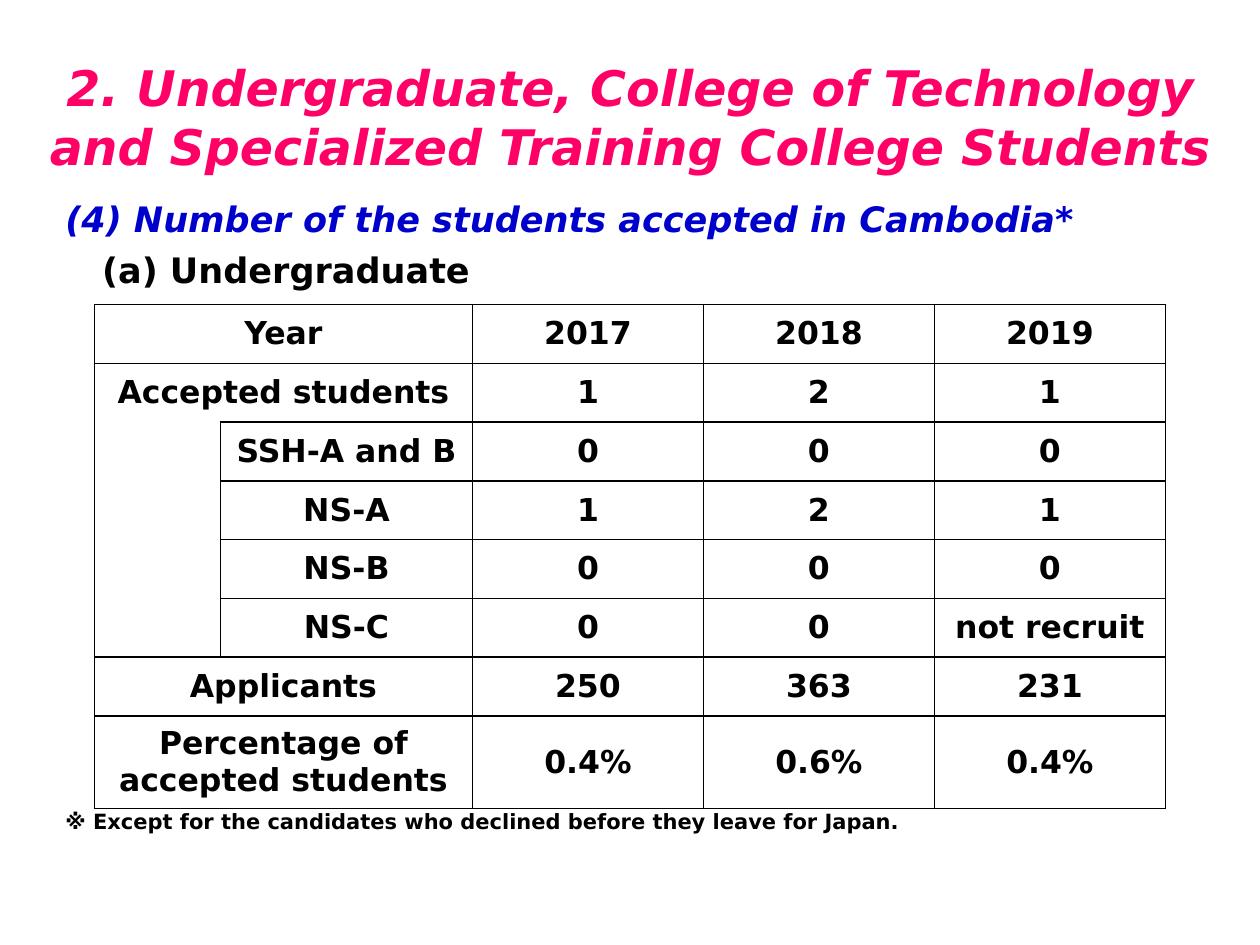
from lxml.etree import SubElement
from pptx import Presentation
from pptx.dml.color import RGBColor
from pptx.enum.text import MSO_ANCHOR as Anchor, PP_ALIGN as Align
from pptx.oxml.ns import qn
from pptx.util import Pt

FONT = "DejaVu Sans"
PINK = RGBColor(0xFF, 0x00, 0x66)
BLUE = RGBColor(0x00, 0x00, 0xCC)
BLACK = RGBColor(0x00, 0x00, 0x00)

TITLE = "2. Undergraduate, College of Technology and Specialized Training College Students"
HEADING = "(4) Number of the students accepted in Cambodia*"
SUBHEADING = "(a) Undergraduate"
FOOTNOTE = "※ Except for the candidates who declined before they leave for Japan."

ROWS = [
    ("Year", "2017", "2018", "2019"),
    ("Accepted students", "1", "2", "1"),
    ("SSH-A and B", "0", "0", "0"),
    ("NS-A", "1", "2", "1"),
    ("NS-B", "0", "0", "0"),
    ("NS-C", "0", "0", "not recruit"),
    ("Applicants", "250", "363", "231"),
    ("Percentage of accepted students", "0.4%", "0.6%", "0.4%"),
]
GROUP_ROW = 1
CATEGORY_ROWS = range(2, 6)
COLUMN_WIDTHS = [72, 144, 132, 132, 132]
ROW_HEIGHTS = [33.6] * 7 + [52.8]
TABLE_LEFT, TABLE_TOP = 54, 174
TEXT_LEFT, TEXT_WIDTH = 37.4, 633.6


def style(para, size, color=BLACK, italic=False):
    font = para.font
    font.name, font.size, font.bold, font.italic = FONT, Pt(size), True, italic
    font.color.rgb = color


def add_text(page, text, left, top, width, height, size, color=BLACK, italic=False):
    box = page.shapes.add_textbox(Pt(left), Pt(top), Pt(width), Pt(height))
    frame = box.text_frame
    frame.word_wrap = True
    frame.margin_left = frame.margin_right = frame.margin_top = frame.margin_bottom = 0
    para = frame.paragraphs[0]
    para.text = text
    style(para, size, color, italic)
    return frame


def set_borders(cell, visible):
    properties = cell._tc.get_or_add_tcPr()
    for side in "LRTB":
        line = SubElement(properties, qn(f"a:ln{side}"), w=str(Pt(1)))
        if side in visible:
            fill = SubElement(line, qn("a:solidFill"))
            SubElement(fill, qn("a:srgbClr"), val=str(BLACK))
        else:
            SubElement(line, qn("a:noFill"))
    cell.fill.background()


def visible_sides(row, column):
    if row == GROUP_ROW and column < 2:
        return "LRT"
    if row in CATEGORY_ROWS and column == 0:
        return "LRB" if row == CATEGORY_ROWS[-1] else "LR"
    return "LRTB"


def fill_cell(cell, text):
    cell.vertical_anchor = Anchor.MIDDLE
    para = cell.text_frame.paragraphs[0]
    para.text = text
    para.alignment = Align.CENTER
    style(para, 18)


def add_student_table(page):
    table = page.shapes.add_table(
        len(ROWS), len(COLUMN_WIDTHS), Pt(TABLE_LEFT), Pt(TABLE_TOP),
        Pt(sum(COLUMN_WIDTHS)), Pt(sum(ROW_HEIGHTS))).table
    table.first_row = table.horz_banding = False
    for column, width in zip(table.columns, COLUMN_WIDTHS):
        column.width = Pt(width)
    for r, (label, *values) in enumerate(ROWS):
        table.rows[r].height = Pt(ROW_HEIGHTS[r])
        for c in range(len(COLUMN_WIDTHS)):
            set_borders(table.cell(r, c), visible_sides(r, c))
        label_column = 1 if r in CATEGORY_ROWS else 0
        if label_column == 0:
            table.cell(r, 0).merge(table.cell(r, 1))
        fill_cell(table.cell(r, label_column), label)
        for c, value in enumerate(values, start=2):
            fill_cell(table.cell(r, c), value)


def main():
    deck = Presentation()
    deck.slide_width, deck.slide_height = Pt(720), Pt(540)
    page = deck.slides.add_slide(deck.slide_layouts[6])

    intro = add_text(page, HEADING, TEXT_LEFT, 113, TEXT_WIDTH, 54, 20, BLUE, True)
    subheading = intro.add_paragraph()
    subheading.text = SUBHEADING
    subheading.space_before = Pt(4.7)
    subheading._p.get_or_add_pPr().set("marL", str(Pt(21)))
    style(subheading, 20)

    add_student_table(page)
    add_text(page, FOOTNOTE, TEXT_LEFT, 462, TEXT_WIDTH, 16, 12)

    title = add_text(page, TITLE, 25.2, 21.6, 669.6, 90, 28, PINK, True)
    title.vertical_anchor = Anchor.MIDDLE
    title.paragraphs[0].alignment = Align.CENTER

    deck.save("out.pptx")


if __name__ == "__main__":
    main()
